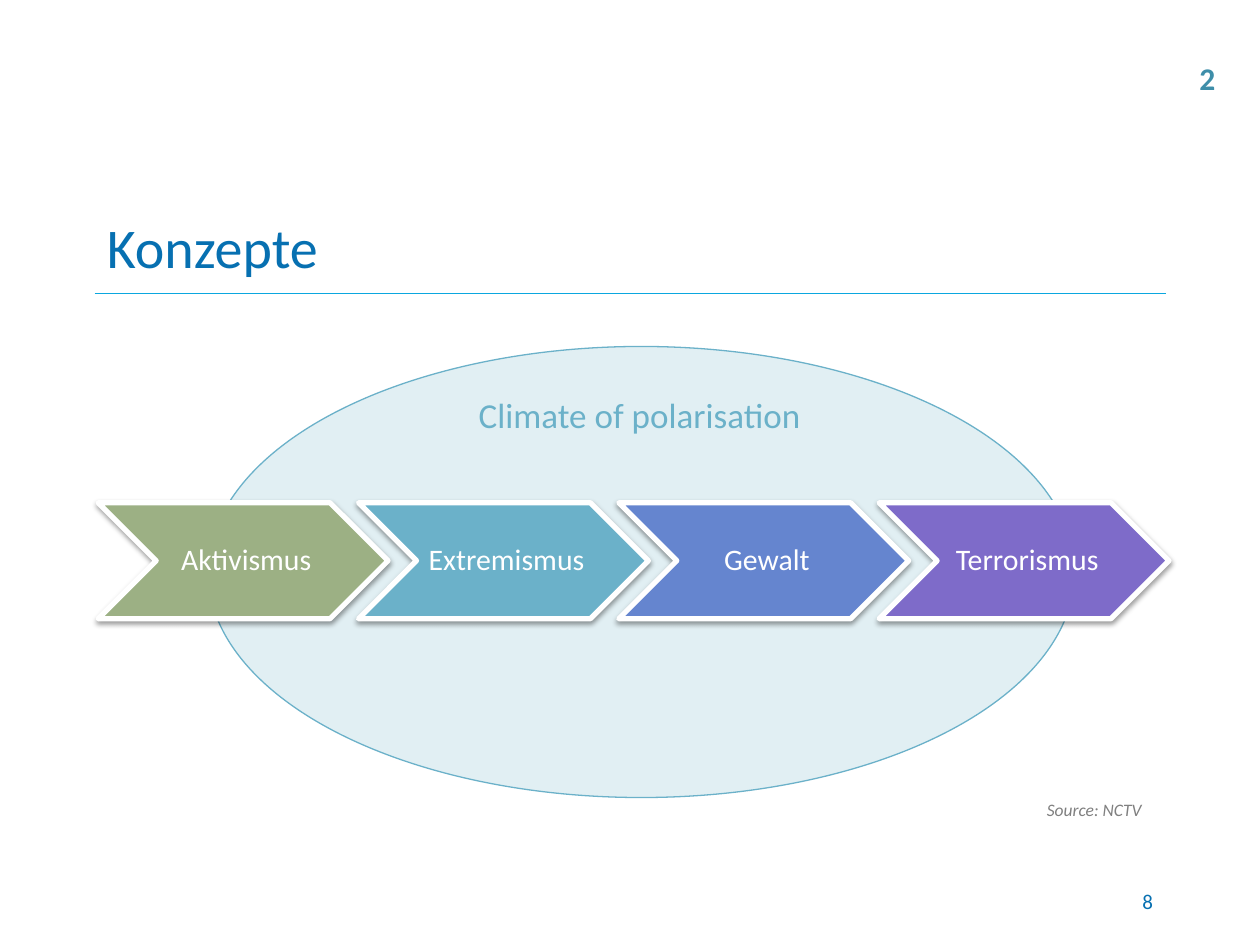
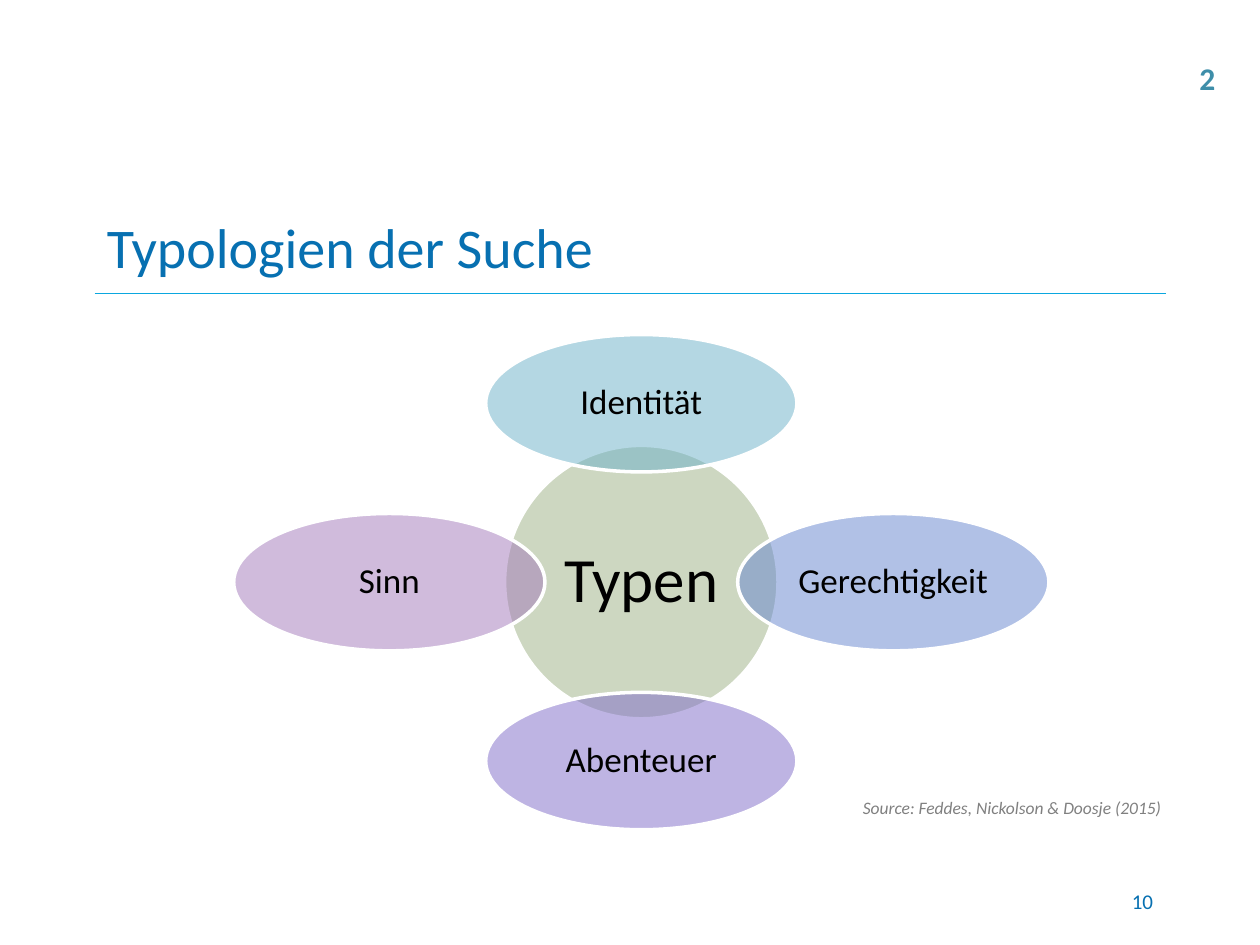
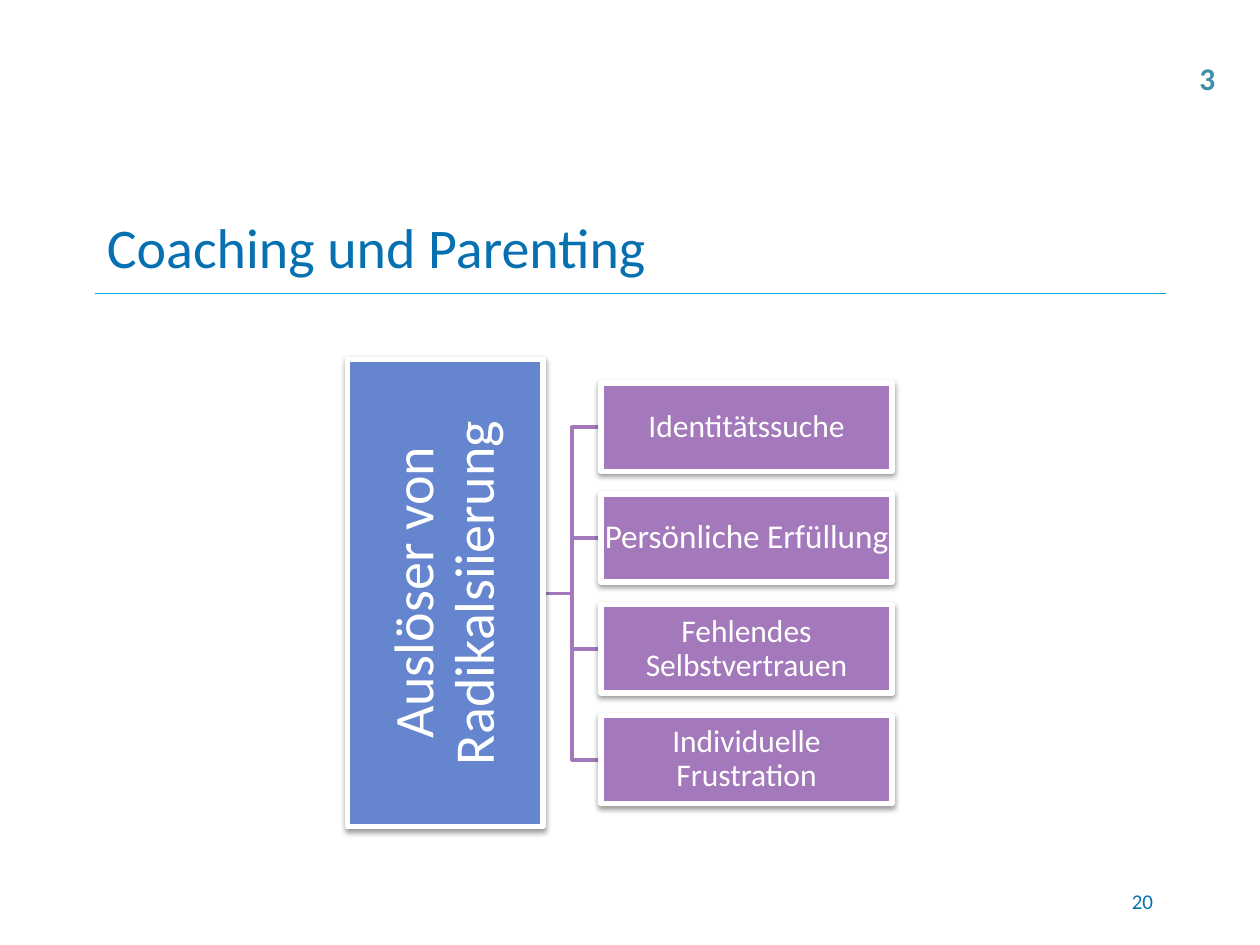
from lxml import etree
from pptx import Presentation
from pptx.dml.color import RGBColor
from pptx.enum import shapes, text
from pptx.oxml.ns import qn
from pptx.util import Inches, Pt

FONT = "Calibri"
TITLE_BLUE, RULE_BLUE, CHAPTER_TEAL = "0770B1", "0BA7DF", "3E8EA9"
GREEN, TEAL, BLUE, VIOLET, PURPLE = "9CB084", "6BB1C9", "6585CF", "7E6BC9", "A379BB"
WHITE, BLACK, GREY, PALE_TEAL = "FFFFFF", "000000", "808080", "C4E0E9"

STAGES = [("Aktivismus", GREEN), ("Extremismus", TEAL), ("Gewalt", BLUE), ("Terrorismus", VIOLET)]
# label, colour, direction from the hub (x, y)
TYPES = [
    ("Identität", TEAL, 0, -1),
    ("Gerechtigkeit", BLUE, 1, 0),
    ("Abenteuer", VIOLET, 0, 1),
    ("Sinn", PURPLE, -1, 0),
]
TRIGGERS = [
    ("Identitätssuche", 18),
    ("Persönliche Erfüllung", 19),
    ("Fehlendes Selbstvertrauen", 18),
    ("Individuelle Frustration", 18),
]


def rgb(color):
    return RGBColor.from_string(color)


def sub(parent, tag, **attrs):
    return etree.SubElement(parent, qn(tag), {k: str(v) for k, v in attrs.items()})


def write(sp, content, size, color, align=text.PP_ALIGN.LEFT, anchor=text.MSO_ANCHOR.TOP,
          inset=None, wrap=True, bold=False, italic=False, spacing=None):
    tf = sp.text_frame
    tf.word_wrap = wrap
    tf.vertical_anchor = anchor
    if inset is not None:
        tf.margin_left, tf.margin_top, tf.margin_right, tf.margin_bottom = map(Inches, inset)
    p = tf.paragraphs[0]
    p.alignment = align
    if spacing:
        p.line_spacing = spacing
    r = p.add_run()
    r.text = content
    r.font.name, r.font.size, r.font.color.rgb = FONT, Pt(size), rgb(color)
    r.font.bold, r.font.italic = bold, italic


def add_text(s, box, content, size, color, **style):
    write(s.shapes.add_textbox(*map(Inches, box)), content, size, color, **style)


def add_box(s, kind, box, fill, line, width, alpha=None, shadow=False):
    sp = s.shapes.add_shape(kind, *map(Inches, box))
    sp.shadow.inherit = False
    sp.fill.solid()
    sp.fill.fore_color.rgb = rgb(fill)
    sp.line.color.rgb = rgb(line)
    sp.line.width = Pt(width)
    props = sp._element.spPr
    if alpha:
        sub(props.find(qn("a:solidFill"))[0], "a:alpha", val=alpha * 1000)
    if shadow:
        outer = sub(props.find(qn("a:effectLst")), "a:outerShdw", blurRad=Pt(3.1),
                    dist=Pt(1.6), dir=5400000, rotWithShape=0)
        sub(sub(outer, "a:srgbClr", val=BLACK), "a:alpha", val=38000)
    return sp


def label(sp, content, size, color, inset):
    write(sp, content, size, color, text.PP_ALIGN.CENTER, text.MSO_ANCHOR.MIDDLE,
          inset, spacing=0.9)


def add_slide(prs, title, chapter, number):
    """Blank slide with the shared title, rule, chapter mark and page number."""
    s = prs.slides.add_slide(prs.slide_layouts[6])
    rule = s.shapes.add_connector(shapes.MSO_CONNECTOR.STRAIGHT, Inches(0.75), Inches(2.33),
                                  Inches(9.25), Inches(2.33))
    rule.line.color.rgb = rgb(RULE_BLUE)
    rule.line.width = Pt(0.75)
    sub(rule._element.spPr, "a:effectLst")
    middle = text.MSO_ANCHOR.MIDDLE
    add_text(s, (0.75, 1.58, 8.5, 0.75), title, 32, TITLE_BLUE, anchor=middle)
    add_text(s, (9.42, 0.42, 0.33, 0.4), chapter, 18, CHAPTER_TEAL, wrap=False, bold=True)
    add_text(s, (7.17, 6.95, 2.08, 0.4), number, 12, TITLE_BLUE,
             align=text.PP_ALIGN.RIGHT, anchor=middle)
    return s


def add_source(s, box, content, wrap):
    add_text(s, box, content, 10, GREY, wrap=wrap, italic=True)


def concepts(prs):
    s = add_slide(prs, "Konzepte", "2", "8")
    add_box(s, shapes.MSO_SHAPE.OVAL, (1.65, 2.75, 6.88, 3.58), PALE_TEAL, TEAL, 0.75, alpha=50)
    add_text(s, (3.7, 3.07, 2.78, 0.44), "Climate of polarisation", 20, TEAL, wrap=False)
    left, step = 0.78, 2.066
    for i, (name, color) in enumerate(STAGES):
        chevron = add_box(s, shapes.MSO_SHAPE.CHEVRON, (left + i * step, 3.99, 2.3, 0.92),
                          color, WHITE, 3, shadow=True)
        label(chevron, name, 17, WHITE, (0.07, 0.02, 0.02, 0.02))
    add_source(s, (8.21, 6.29, 0.96, 0.27), "Source: NCTV", wrap=False)


def typologies(prs):
    s = add_slide(prs, "Typologien der Suche", "2", "10")
    center_x, center_y = 5.09, 4.62
    reach_x, reach_y = 2, 1.42

    def add_oval(name, color, x, y, width, height, size, inset):
        oval = add_box(s, shapes.MSO_SHAPE.OVAL, (x - width / 2, y - height / 2, width, height),
                       color, WHITE, 2, alpha=50)
        label(oval, name, size, BLACK, [inset] * 4)

    add_oval("Typen", GREEN, center_x, center_y, 2.17, 2.17, 36, 0.05)
    for name, color, dx, dy in TYPES:
        add_oval(name, color, center_x + dx * reach_x, center_y + dy * reach_y,
                 2.47, 1.09, 20, 0.03)
    add_source(s, (6.75, 6.28, 2.67, 0.27), "Source: Feddes, Nickolson & Doosje (2015)", wrap=True)


def triggers(prs):
    s = add_slide(prs, "Coaching und Parenting", "3", "20")
    root_right, bend, left, root_y = 4.31, 4.54, 4.77, 4.71
    top, step, width, height = 3.04, 0.88, 2.31, 0.7
    tops = [top + i * step for i in range(len(TRIGGERS))]
    for y in tops:
        mid = y + height / 2
        branch = s.shapes.build_freeform(Inches(root_right), Inches(root_y))
        branch.add_line_segments([(Inches(px), Inches(py)) for px, py in
                                  ((bend, root_y), (bend, mid), (left, mid))], close=False)
        sp = branch.convert_to_shape()
        sp.shadow.inherit = False
        sp.fill.background()
        sp.line.color.rgb = rgb(PURPLE)
        sp.line.width = Pt(2)
    root = add_box(s, shapes.MSO_SHAPE.RECTANGLE, (1.68, 3.93, 3.71, 1.55), BLUE, WHITE, 3,
                   shadow=True)
    root.rotation = 270
    label(root, "Auslöser von Radikalsiierung", 32, WHITE, [0.02] * 4)
    for y, (name, size) in zip(tops, TRIGGERS):
        box = add_box(s, shapes.MSO_SHAPE.RECTANGLE, (left, y, width, height), PURPLE, WHITE, 3,
                      shadow=True)
        label(box, name, size, WHITE, [0.01] * 4)


def main():
    prs = Presentation()
    prs.slide_width, prs.slide_height = Inches(10), Inches(7.5)
    concepts(prs)
    typologies(prs)
    triggers(prs)
    prs.save("out.pptx")


if __name__ == "__main__":
    main()
